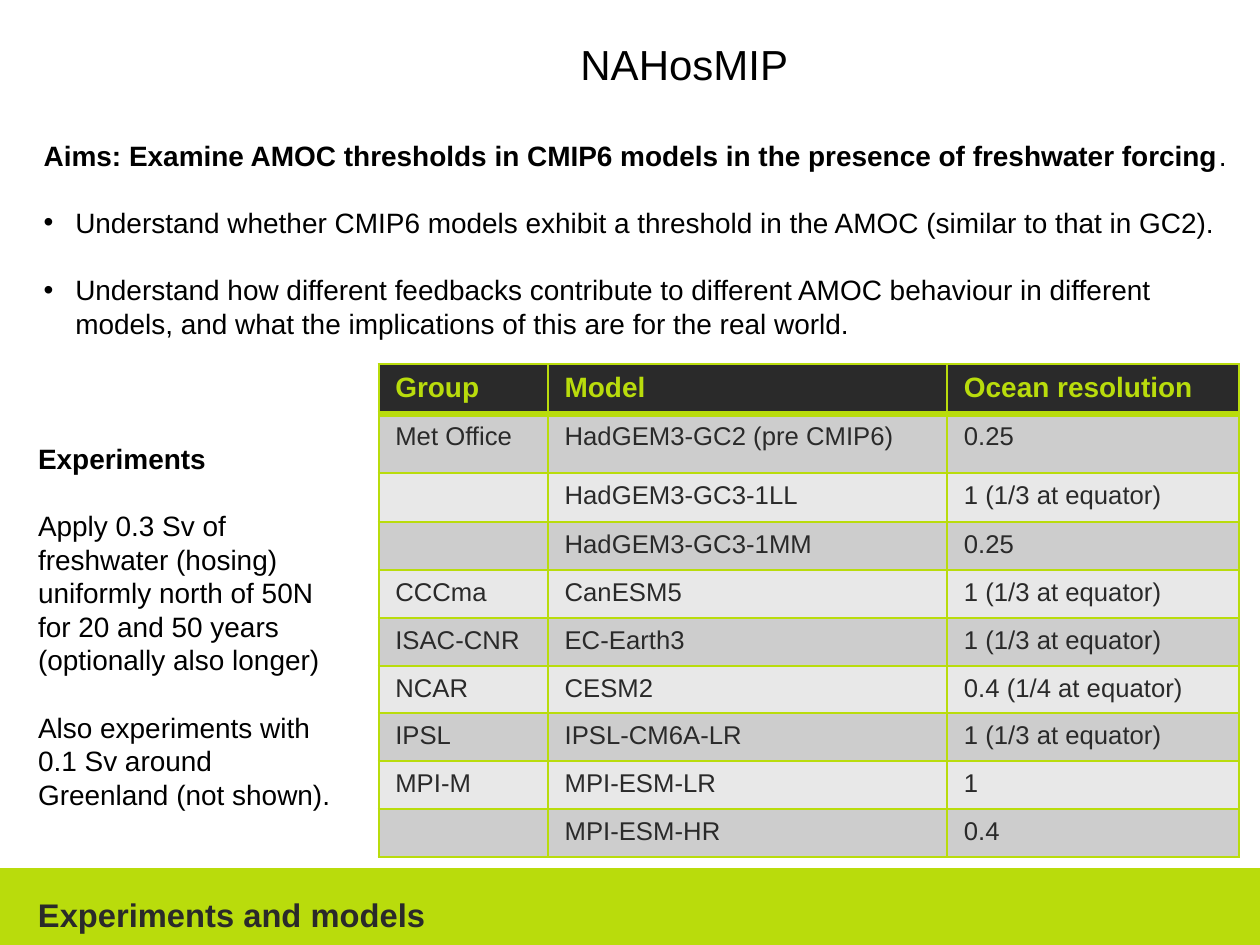
from pptx import Presentation
from pptx import util as u
from pptx.dml.color import RGBColor
from pptx.enum import shapes, text
from pptx.oxml.ns import qn
from lxml import etree

LIME = RGBColor(0xB9, 0xDC, 0x0C)
DARK = RGBColor(0x2A, 0x2A, 0x2A)
BLACK = RGBColor(0, 0, 0)
BANDS = RGBColor(0xCD, 0xCD, 0xCD), RGBColor(0xE8, 0xE8, 0xE8)
FONT = "Arial"
LEADING = 1.2

AIM = "Aims: Examine AMOC thresholds in CMIP6 models in the presence of freshwater forcing"
GOALS = [
    "Understand whether CMIP6 models exhibit a threshold in the AMOC (similar to that in GC2).",
    "Understand how different feedbacks contribute to different AMOC behaviour in different "
    "models, and what the implications of this are for the real world.",
]
EXPERIMENTS = [
    "Apply 0.3 Sv of freshwater (hosing) uniformly north of 50N for 20 and 50 years "
    "(optionally also longer)",
    "Also experiments with 0.1 Sv around Greenland (not shown).",
]
MODELS = [
    ("Group", "Model", "Ocean resolution"),
    ("Met Office", "HadGEM3-GC2 (pre CMIP6)", "0.25"),
    ("", "HadGEM3-GC3-1LL", "1 (1/3 at equator)"),
    ("", "HadGEM3-GC3-1MM", "0.25"),
    ("CCCma", "CanESM5", "1 (1/3 at equator)"),
    ("ISAC-CNR", "EC-Earth3", "1 (1/3 at equator)"),
    ("NCAR", "CESM2", "0.4 (1/4 at equator)"),
    ("IPSL", "IPSL-CM6A-LR", "1 (1/3 at equator)"),
    ("MPI-M", "MPI-ESM-LR", "1"),
    ("", "MPI-ESM-HR", "0.4"),
]


def grid(n):
    """Length of n columns or rows of the 0.1 inch grid."""
    return u.Inches(n / 10)


def write(p, words, size=12, color=BLACK, bold=False, before=0, leading=LEADING):
    """Add a formatted run to a paragraph."""
    p.alignment = text.PP_ALIGN.LEFT
    p.line_spacing = u.Pt(size * leading) if leading else None
    p.space_before = u.Pt(before)
    if words:
        r = p.add_run()
        r.text = words
        r.font.name, r.font.size, r.font.bold = FONT, u.Pt(size), bold
        r.font.color.rgb = color
    else:
        # An empty cell keeps the text size, so its row stays low
        etree.SubElement(p._p, qn("a:endParaRPr")).set("sz", str(size * 100))


def set_bullet(p, char=None, indent=0):
    pPr = p._p.get_or_add_pPr()
    pPr.set("marL", str(grid(indent)))
    pPr.set("indent", str(-grid(indent)))
    if char:
        etree.SubElement(pPr, qn("a:buFont")).set("typeface", FONT)
        etree.SubElement(pPr, qn("a:buChar")).set("char", char)
    else:
        etree.SubElement(pPr, qn("a:buNone"))


def set_border(cell, side, width):
    ln = etree.SubElement(cell._tc.get_or_add_tcPr(), qn("a:ln" + side), w=str(u.Pt(width)))
    fill = etree.SubElement(ln, qn("a:solidFill"))
    etree.SubElement(fill, qn("a:srgbClr")).set("val", str(LIME))


class Deck:
    def __init__(self, columns, rows):
        self.prs = Presentation()
        self.prs.slide_width, self.prs.slide_height = grid(columns), grid(rows)
        self.s = self.prs.slides.add_slide(self.prs.slide_layouts[1])

    def frame(self, sp, x, y, w, h):
        sp.left, sp.top, sp.width, sp.height = map(grid, (x, y, w, h))
        tf = sp.text_frame
        tf.word_wrap = True
        tf.auto_size = text.MSO_AUTO_SIZE.NONE
        tf.vertical_anchor = text.MSO_ANCHOR.TOP
        return tf

    def title(self, words, *box):
        tf = self.frame(self.s.shapes.title, *box)
        write(tf.paragraphs[0], words, size=18)

    def bullets(self, lead, items, *box):
        tf = self.frame(self.s.placeholders[1], *box)
        p = tf.paragraphs[0]
        set_bullet(p)
        write(p, lead, bold=True)
        write(p, ".")
        for item in items:
            p = tf.add_paragraph()
            set_bullet(p, "•", 1.88)
            write(p, item, before=12 * LEADING)

    def note(self, heading, paragraphs, *box, size=12, color=BLACK):
        tf = self.frame(self.s.shapes.add_textbox(0, 0, 0, 0), *box)
        write(tf.paragraphs[0], heading, size, color, bold=True)
        for words in paragraphs:
            write(tf.add_paragraph(), words, size, color, before=size * LEADING)

    def bar(self, *box):
        sp = self.s.shapes.add_shape(shapes.MSO_SHAPE.RECTANGLE, *map(grid, box))
        sp.shadow.inherit = False
        sp.fill.solid()
        sp.fill.fore_color.rgb = LIME
        sp.line.color.rgb = LIME
        sp.line.width = u.Pt(1)

    def table(self, data, x, y, widths, heights):
        tbl = self.s.shapes.add_table(len(data), len(widths), grid(x), grid(y),
                                      grid(sum(widths)), grid(sum(heights))).table
        tbl.horz_banding = False
        for column, w in zip(tbl.columns, widths):
            column.width = grid(w)
        for i, (row, h) in enumerate(zip(data, heights)):
            tbl.rows[i].height = grid(h)
            for j, words in enumerate(row):
                self.cell(tbl.cell(i, j), words, i)

    def cell(self, cell, words, i):
        header = i == 0
        for side in "LRTB":
            thick = (side, i) in (("B", 0), ("T", 1))
            set_border(cell, side, 3 if thick else 1)
        cell.fill.solid()
        cell.fill.fore_color.rgb = DARK if header else BANDS[(i - 1) % 2]
        write(cell.text_frame.paragraphs[0], words, size=12 if header else 11,
              color=LIME if header else DARK, bold=header, leading=None)


def main():
    deck = Deck(75, 56.25)
    # Footer band
    deck.bar(0, 51.75, 75, 4.5)
    deck.note("Experiments and models", [], 1.28, 52.75, 27.6, 3.4, size=14, color=DARK)
    # Title and aims
    deck.title("NAHosMIP", 33.55, 1.8, 37, 4)
    deck.bullets(AIM, GOALS, 1.6, 7.73, 72.9, 13.1)
    # Experiments beside the model table
    deck.note("Experiments", EXPERIMENTS, 1.28, 25.78, 20.5, 23.2)
    deck.table(MODELS, 22.53, 21.67, [10.08, 23.77, 17.35], [2.98, 3.52] + [2.84] * 8)
    deck.prs.save("out.pptx")


if __name__ == "__main__":
    main()
